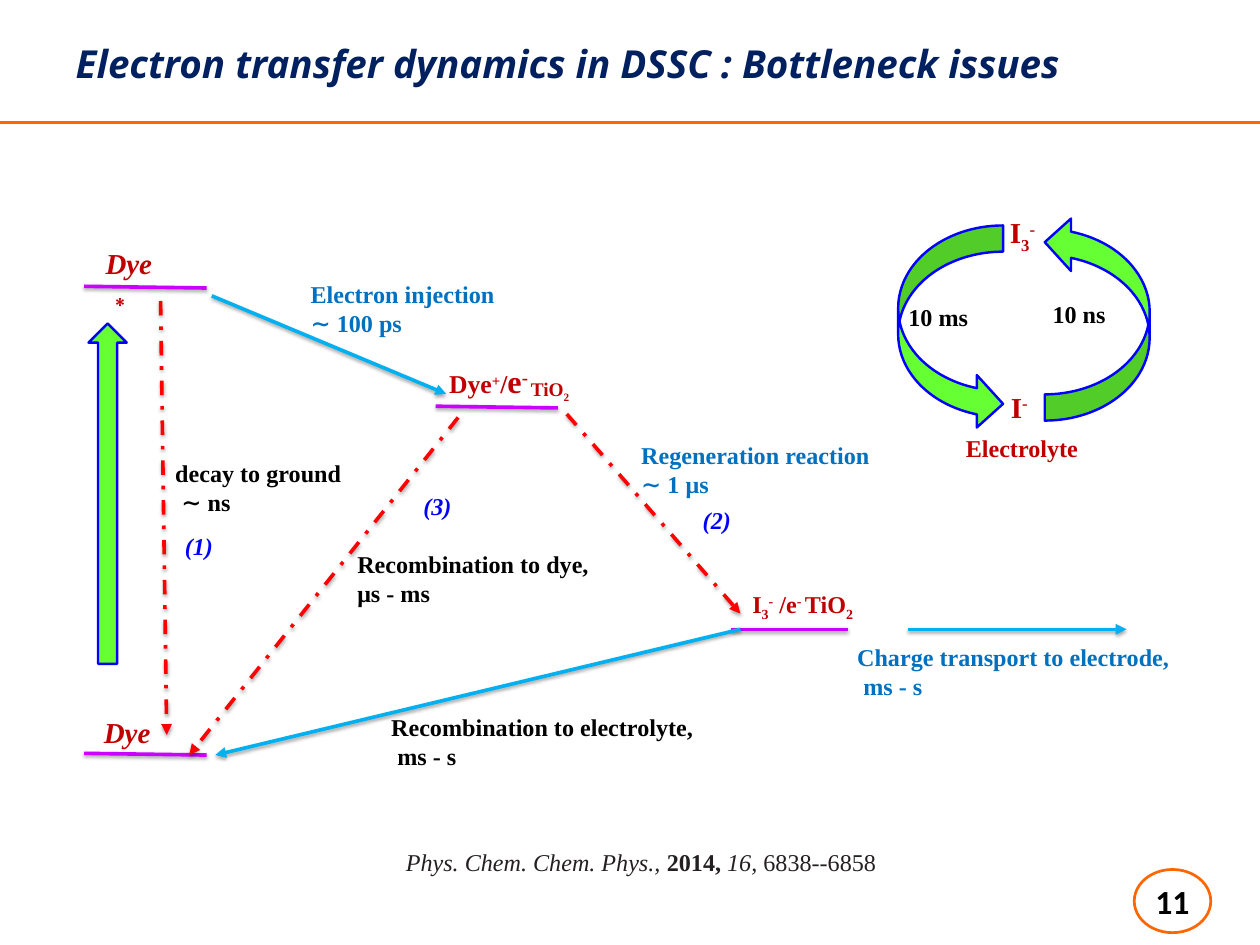
from pptx import Presentation
from pptx.dml.color import RGBColor
from pptx.enum.dml import MSO_LINE
from pptx.enum.shapes import MSO_CONNECTOR, MSO_SHAPE as SHAPE
from pptx.enum.text import MSO_ANCHOR as ANCHOR, MSO_AUTO_SIZE as AUTOSIZE, PP_ALIGN as ALIGN
from pptx.oxml import parse_xml
from pptx.oxml.ns import nsdecls, qn
from pptx.util import Cm, Pt

NAVY = RGBColor(0x00, 0x20, 0x60)
ORANGE = RGBColor(0xFF, 0x66, 0x00)
PURPLE = RGBColor(0xCC, 0x00, 0xFF)
RED = RGBColor(0xFF, 0x00, 0x00)
SKY = RGBColor(0x00, 0xB0, 0xF0)
BLUE = RGBColor(0x00, 0x70, 0xC0)
PURE_BLUE = RGBColor(0x00, 0x00, 0xFF)
GREEN = RGBColor(0x66, 0xFF, 0x33)
MAROON = RGBColor(0xC0, 0x00, 0x00)
BLACK = RGBColor(0x00, 0x00, 0x00)
INK = RGBColor(0x24, 0x20, 0x21)

SERIF = "Times New Roman"
WIDTH, HEIGHT = 36.88, 27.66
TITLE = "Electron transfer dynamics in DSSC : Bottleneck issues"
PAGE_NUMBER = "11"

SUP, SUB = {"base": 30000}, {"base": -25000}
BIG, BIG_SUP = {"size": 26.7}, {"size": 26.7, "base": 30000}
UPRIGHT_BOLD, UPRIGHT = {"italic": False, "bold": True}, {"italic": False}

NOTE = {"size": 20, "color": BLACK}
PROCESS = {"size": 20, "color": BLUE}
STATE = {"size": 20, "color": MAROON}
ION = {"size": 24, "color": MAROON}
DYE = {"size": 24, "color": MAROON, "italic": True}
CHARGED = {"size": 21.3, "color": MAROON}
OXIDE = {"size": 16, "color": MAROON}
STEP = {"size": 20, "color": PURE_BLUE, "italic": True}
CITATION = {"size": 20, "color": INK, "bold": False, "italic": True}

LEVELS = [
    (2.46, 8.38, 6.05, 8.43),
    (2.46, 22.05, 6.05, 22.1),
    (12.75, 11.89, 16.33, 11.94),
    (21.41, 18.42, 24.82, 18.42),
]
LOSSES = [
    (4.7, 8.81, 4.88, 21.51),
    (13.41, 12.22, 5.54, 22.1),
    (16.59, 12.12, 21.67, 17.96),
]
TRANSFERS = [
    (6.2, 8.66, 13.06, 11.53),
    (21.67, 18.42, 6.3, 22.1),
    (26.57, 18.42, 32.97, 18.42),
]
GREEN_ARROWS = [
    (SHAPE.UP_ARROW, 2.59, 9.47, 1.12, 9.96, 0),
    (SHAPE.CURVED_RIGHT_ARROW, 26.29, 6.6, 3.07, 5.99, 0),
    (SHAPE.CURVED_RIGHT_ARROW, 30.58, 6.32, 3.07, 5.99, 180),
]

LABELS = [
    (4.88, 13.28, 5.6, 0.18, NOTE, ["decay to ground", "∼ ns"]),
    (2.79, 20.78, 2.2, 0, DYE, ["Dye"]),
    (2.84, 7.06, 2.54, 0, DYE, ["Dye", "∗"]),
    (8.84, 8.05, 6.3, 0, PROCESS, ["Electron injection", "∼ 100 ps"]),
    (10.21, 15.95, 7.67, 0, NOTE, ["Recombination to dye, μs - ms"]),
    (12.9, 10.46, 4.01, 0, CHARGED,
     [[("Dye", {}), ("+", SUP), ("/", {}), ("e", BIG), ("-", BIG_SUP)]]),
    (15.29, 10.92, 1.9, 0, OXIDE, [[("TiO", {}), ("2", SUB)]]),
    (21.77, 17.12, 3.9, 0, STATE,
     [[("I", {}), ("3", SUB), ("-", SUP), (" /e", {}), ("- ", SUP), ("TiO", {}), ("2", SUB)]]),
    (18.52, 12.78, 7.6, 0, PROCESS, ["Regeneration reaction", "∼ 1 μs"]),
    (11.2, 20.73, 10.21, 0.18, NOTE, ["Recombination to electrolyte,", "ms - s"]),
    (24.84, 18.67, 9.9, 0.18, PROCESS, ["Charge transport to electrode,", "ms - s"]),
    (29.34, 11.28, 1.3, 0, ION, [[("I", {}), ("-", SUP)]]),
    (29.31, 6.17, 1.6, 0, ION, [[("I", {}), ("3", SUB), ("-", SUP)]]),
    (26.34, 8.74, 2.5, 0, NOTE, ["10 ms"]),
    (30.56, 8.64, 2.3, 0, NOTE, ["10 ns"]),
    (28.02, 12.57, 4, 0, STATE, ["Electrolyte"]),
    (5.16, 15.44, 1.6, 0, STEP, ["(1)"]),
    (20.32, 14.66, 1.6, 0, STEP, ["(2)"]),
    (12.14, 14.27, 1.6, 0, STEP, ["(3)"]),
    (11.63, 24.69, 18.44, 0, CITATION,
     [[("Phys. Chem. Chem. Phys., ", {}), ("2014, ", UPRIGHT_BOLD), ("16, ", {}),
       ("6838--6858", UPRIGHT)]]),
]

SHADOW = (
    f'<a:effectLst {nsdecls("a")}><a:outerShdw blurRad="{Pt(3.1)}" dist="{Pt(1.8)}" '
    'dir="5400000" rotWithShape="0"><a:srgbClr val="000000"><a:alpha val="35000"/>'
    '</a:srgbClr></a:outerShdw></a:effectLst>'
)
NO_SHADOW = f'<a:effectLst {nsdecls("a")}/>'
ARROWHEAD = f'<a:tailEnd {nsdecls("a")} type="triangle"/>'


def add_span(para, text, size, color, bold=True, italic=False, base=0, font=SERIF):
    span = para.add_run()
    span.text = text
    span.font.name, span.font.size = font, Pt(size)
    span.font.bold, span.font.italic = bold, italic
    span.font.color.rgb = color
    if base:
        span._r.get_or_add_rPr().set("baseline", str(base))


def add_line(page, ends, color, arrow=False, dash=None, effect=SHADOW):
    line = page.shapes.add_connector(MSO_CONNECTOR.STRAIGHT, *map(Cm, ends))
    line.line.color.rgb = color
    line.line.width = Pt(3)
    if dash:
        line.line.dash_style = dash
    properties = line._element.spPr
    if arrow:
        properties.find(qn("a:ln")).append(parse_xml(ARROWHEAD))
    properties.append(parse_xml(effect))


def add_outline(page, kind, place, color, width):
    shape = page.shapes.add_shape(kind, *map(Cm, place))
    shape.shadow.inherit = False
    shape.line.color.rgb = color
    shape.line.width = Pt(width)
    return shape


def add_label(page, left, top, width, indent, style, lines):
    height = 0.28 + 0.042 * style["size"] * len(lines)
    box = page.shapes.add_textbox(Cm(left), Cm(top), Cm(width), Cm(height))
    frame = box.text_frame
    frame.word_wrap = True
    for index, line in enumerate(lines):
        para = frame.add_paragraph() if index else frame.paragraphs[0]
        if index and indent:
            para._p.get_or_add_pPr().set("marL", str(Cm(indent)))
        spans = [(line, {})] if isinstance(line, str) else line
        for text, extra in spans:
            add_span(para, text, **{**style, **extra})


def add_title(page):
    title = page.shapes.title
    title.left, title.top, title.width, title.height = map(Cm, (1.96, 1.04, 32.97, 1.63))
    frame = title.text_frame
    frame.word_wrap = True
    frame.auto_size = AUTOSIZE.NONE
    frame.vertical_anchor = ANCHOR.MIDDLE
    para = frame.paragraphs[0]
    para.alignment = ALIGN.LEFT
    add_span(para, TITLE, 32, NAVY, italic=True, font="Noto Sans")


def add_page_number(page):
    badge = add_outline(page, SHAPE.OVAL, (33.2, 25.45, 2.24, 1.85), ORANGE, 2.25)
    badge.fill.background()
    frame = badge.text_frame
    frame.margin_left = frame.margin_right = frame.margin_top = frame.margin_bottom = 0
    frame.vertical_anchor = ANCHOR.MIDDLE
    para = frame.paragraphs[0]
    para.alignment = ALIGN.CENTER
    add_span(para, PAGE_NUMBER, 28, BLACK, font="Calibri")


def main():
    deck = Presentation()
    deck.slide_width, deck.slide_height = Cm(WIDTH), Cm(HEIGHT)
    page = deck.slides.add_slide(deck.slide_layouts[5])
    add_title(page)
    add_line(page, (0, 3.58, WIDTH, 3.58), ORANGE, effect=NO_SHADOW)
    for ends in LEVELS:
        add_line(page, ends, PURPLE)
    for ends in LOSSES:
        add_line(page, ends, RED, arrow=True, dash=MSO_LINE.DASH_DOT)
    for ends in TRANSFERS:
        add_line(page, ends, SKY, arrow=True)
    for kind, *place, turn in GREEN_ARROWS:
        arrow = add_outline(page, kind, place, PURE_BLUE, 2)
        arrow.fill.solid()
        arrow.fill.fore_color.rgb = GREEN
        arrow.rotation = turn
    for label in LABELS:
        add_label(page, *label)
    add_page_number(page)
    deck.save("out.pptx")


if __name__ == "__main__":
    main()
